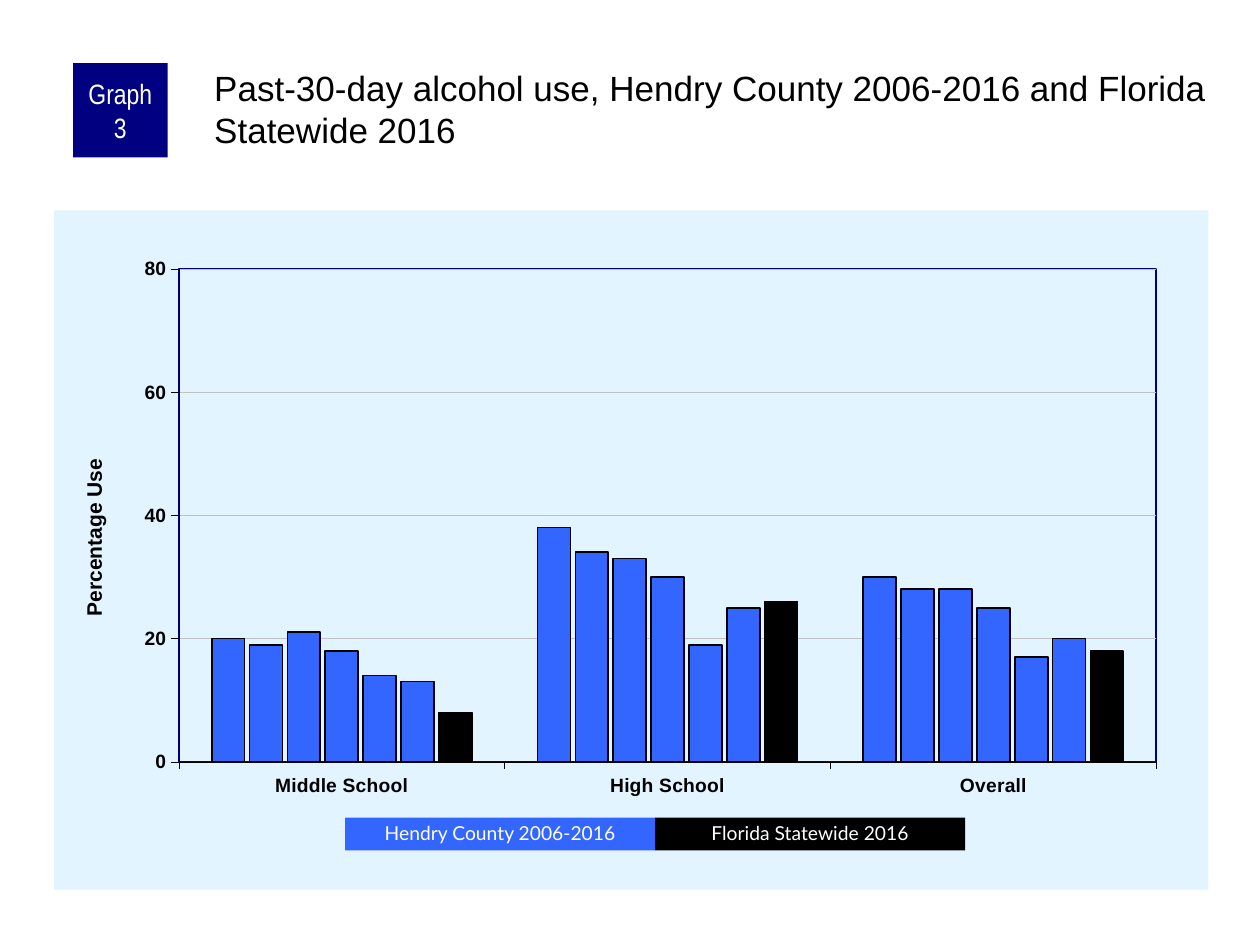
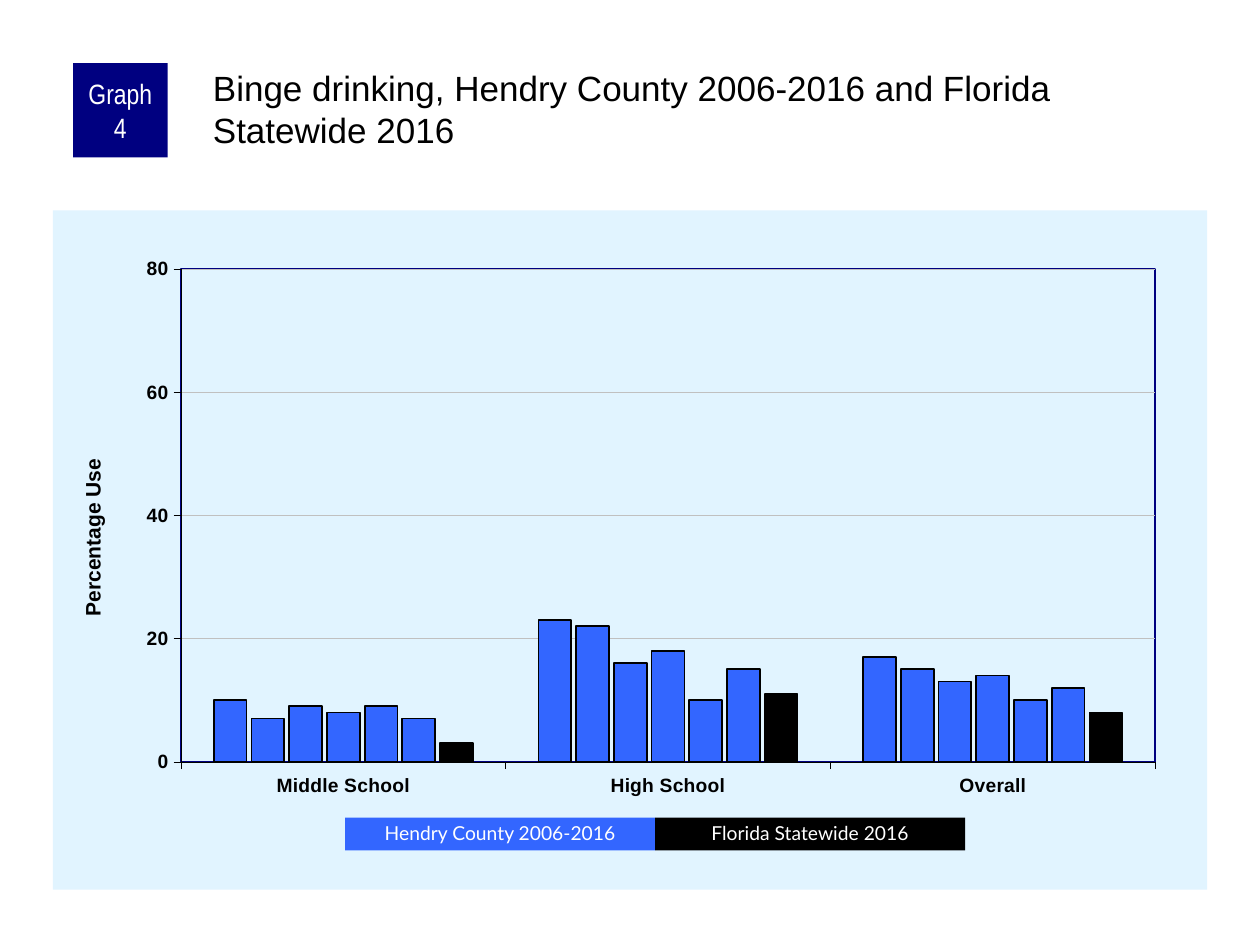
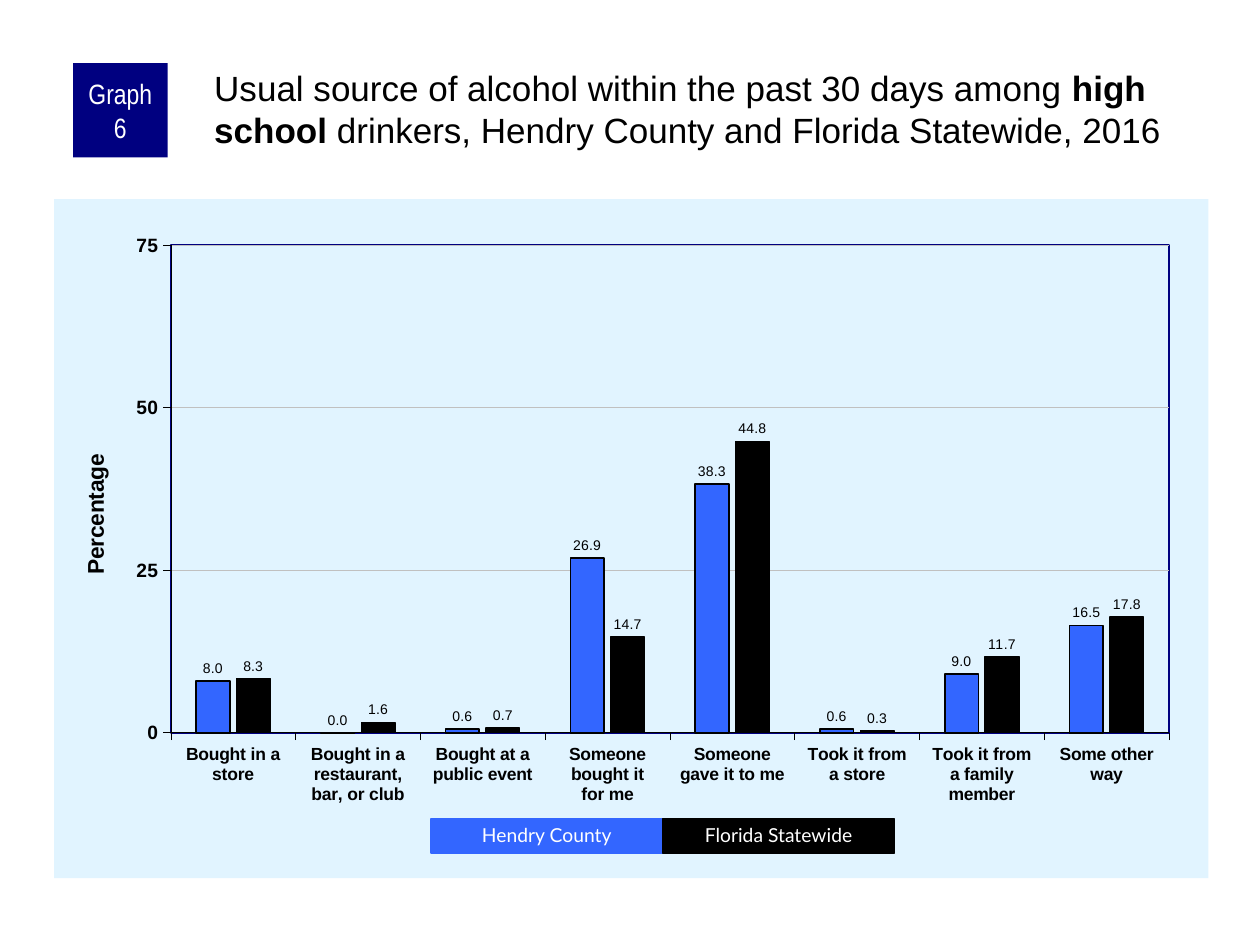
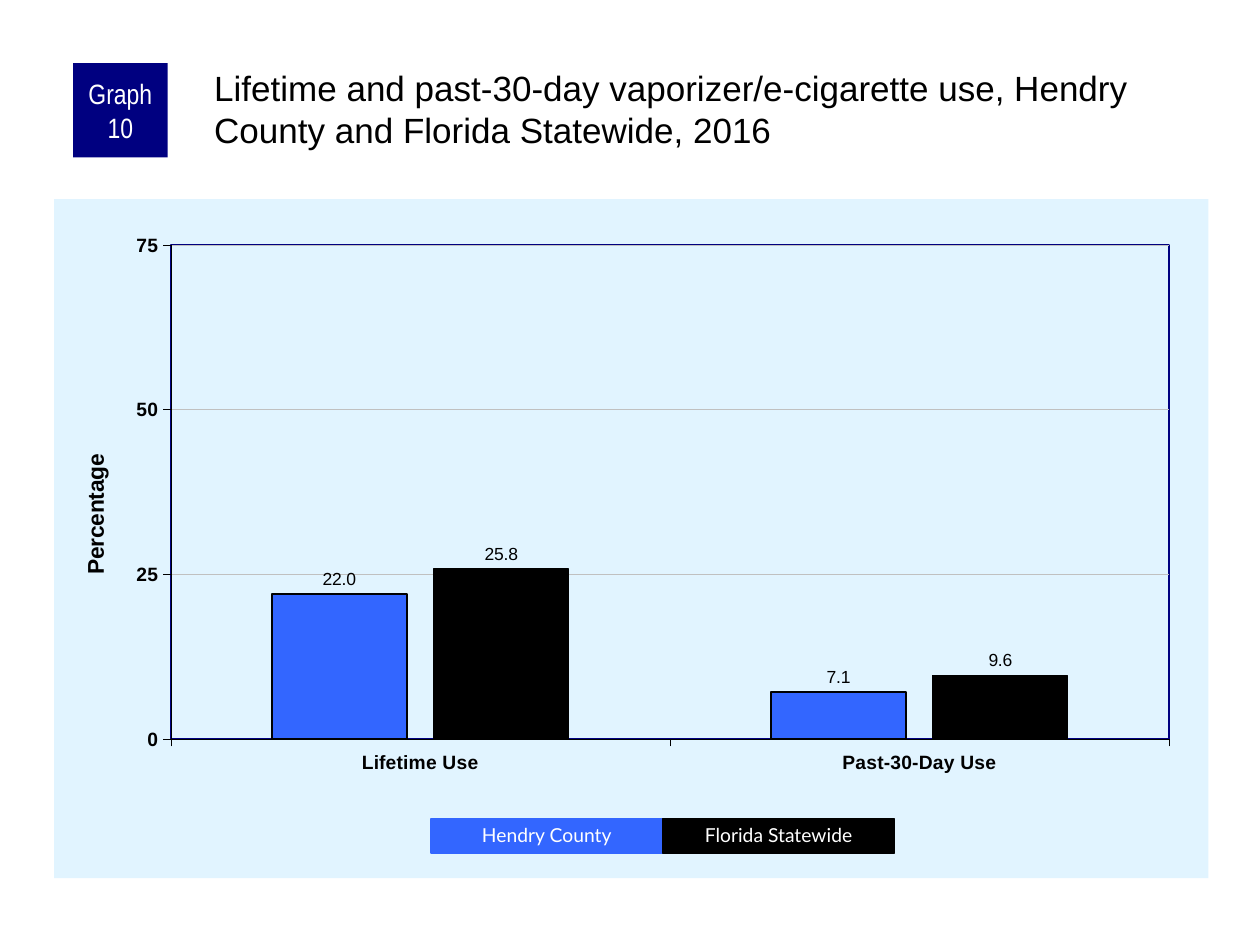
from pptx import Presentation
from pptx.chart.data import CategoryChartData
from pptx.dml.color import RGBColor
from pptx.enum.chart import XL_CHART_TYPE, XL_LABEL_POSITION, XL_TICK_MARK
from pptx.enum.shapes import MSO_SHAPE
from pptx.enum.text import MSO_ANCHOR, MSO_AUTO_SIZE, PP_ALIGN
from pptx.oxml import parse_xml
from pptx.oxml.ns import nsdecls, qn
from pptx.util import Inches, Pt

NAVY, BLUE, BLACK, WHITE = "000080", "3366FF", "000000", "FFFFFF"
PALE, GRAY = "E1F4FF", "C0C0C0"
LEVELS = ["Middle School", "High School", "Overall"]
SOURCES = ["Bought in a store", "Bought in a restaurant, bar, or club",
           "Bought at a public event", "Someone bought it\nfor me",
           "Someone\ngave it to me", "Took it from\na store",
           "Took it from\na family member", "Some other way"]
TREND = dict(top=1.67, unit="Percentage Use", unit_size=12, unit_at=(0.02, 0.36),
             peak=80, step=20, gap=200, overlap=-15, size=8, edge=1)
COMPARE = dict(top=1.58, unit="Percentage", unit_size=13, unit_at=(0.02, 0.37),
               peak=75, step=25, gap=150, overlap=-20, size=11.5, edge=0.75)
TREND_KEY = dict(names=["Hendry County 2006-2016", "Florida Statewide 2016"],
                 left=2.74, top=6.49, width=2.46, height=0.26)
COMPARE_KEY = dict(names=["Hendry County", "Florida Statewide"],
                   left=3.42, top=6.5, width=1.84, height=0.27, edge=0.75)


def color(code):
    """Turn a hex string into a colour."""
    return RGBColor.from_string(code)


def style(font, size, code=BLACK, bold=False, face="Arial"):
    """Set size, colour, weight and face of a font."""
    font.size, font.bold, font.name = Pt(size), bold, face
    font.color.rgb = color(code)


def stroke(line, code, width):
    """Give a line its colour and width."""
    line.color.rgb = color(code)
    line.width = Pt(width)


def inset(frame, left, top, right, bottom):
    """Set the four text margins."""
    frame.margin_left, frame.margin_top = Inches(left), Inches(top)
    frame.margin_right, frame.margin_bottom = Inches(right), Inches(bottom)


def add_box(slide, text, place, fill, size, face, edge=0):
    """Add a filled rectangle with centred white text."""
    box = slide.shapes.add_shape(MSO_SHAPE.RECTANGLE, *map(Inches, place))
    box.shadow.inherit = False
    box.fill.solid()
    box.fill.fore_color.rgb = color(fill)
    if edge:
        stroke(box.line, fill, edge)
    else:
        box.line.fill.background()
    frame = box.text_frame
    frame.word_wrap = True
    frame.vertical_anchor = MSO_ANCHOR.MIDDLE
    para = frame.paragraphs[0]
    para.alignment = PP_ALIGN.CENTER
    run = para.add_run()
    run.text = text
    style(run.font, size, WHITE, face=face)
    return box


def add_badge(slide, number):
    """Add the square that numbers the graph."""
    badge = add_box(slide, f"Graph {number}", (0.58, 0.5, 0.75, 0.75),
                    NAVY, 16, "Arial Narrow")
    inset(badge.text_frame, 0.05, 0, 0.05, 0)


def add_title(slide, parts, left=1.67):
    """Fill the title placeholder; every second part is bold."""
    title = slide.shapes.title
    title.left, title.top = Inches(left), Inches(0.5)
    title.width, title.height = Inches(7.92), Inches(0.83)
    frame = title.text_frame
    frame.auto_size = MSO_AUTO_SIZE.NONE
    frame.word_wrap = True
    frame.vertical_anchor = MSO_ANCHOR.TOP
    inset(frame, 0.03, 0.03, 0, 0)
    para = frame.paragraphs[0]
    para.alignment = PP_ALIGN.LEFT
    for index, part in enumerate(parts):
        run = para.add_run()
        run.text = part
        style(run.font, 20, bold=index % 2 == 1)


def add_key(slide, names, left, top, width, height, edge=0):
    """Add the two joined boxes that name the bar colours."""
    for index, (name, fill) in enumerate(zip(names, (BLUE, BLACK))):
        place = (left + index * width, top, width, height)
        box = add_box(slide, name, place, fill, 11, "Lato", edge)
        box.text_frame.paragraphs[0].line_spacing = 0.9


def set_layout(parent, index, **spots):
    """Place a chart part by fractions of the chart."""
    old = parent.find(qn("c:layout"))
    if old is not None:
        parent.remove(old)
    inner = '<c:layoutTarget val="inner"/>' if "w" in spots else ""
    modes = "".join(f'<c:{key}Mode val="edge"/>' for key in "xy")
    sizes = "".join(f'<c:{key} val="{val}"/>' for key, val in spots.items())
    parent.insert(index, parse_xml(
        f'<c:layout {nsdecls("c")}><c:manualLayout>{inner}{modes}{sizes}'
        '</c:manualLayout></c:layout>'))


def make_look(fill, line):
    """Build the fill and line element of a chart area."""
    return parse_xml(f'<c:spPr {nsdecls("c", "a")}>{fill}{line}</c:spPr>')


def paint(code):
    """Build a solid fill."""
    return f'<a:solidFill><a:srgbClr val="{code}"/></a:solidFill>'


def set_areas(chart, plot):
    """Place the plot and paint the chart and plot areas."""
    root = chart.element.find(qn("c:chart"))
    area = root.find(qn("c:plotArea"))
    set_layout(area, 0, **dict(zip("xywh", plot)))
    area.append(make_look("<a:noFill/>", f'<a:ln w="12700">{paint(NAVY)}</a:ln>'))
    root.addnext(make_look(paint(PALE), "<a:ln><a:noFill/></a:ln>"))


def set_axes(chart, kind, cat_size):
    """Format both axes, the grid and the axis title."""
    values = chart.value_axis
    for axis, size in ((chart.category_axis, cat_size), (values, 11)):
        axis.major_tick_mark = XL_TICK_MARK.OUTSIDE
        style(axis.tick_labels.font, size, bold=True)
        stroke(axis.format.line, BLACK, 0.25)
    values.minimum_scale, values.maximum_scale = 0, kind["peak"]
    values.major_unit = kind["step"]
    stroke(values.major_gridlines.format.line, GRAY, 0.25)
    run = values.axis_title.text_frame.paragraphs[0].add_run()
    run.text = kind["unit"]
    style(run.font, kind["unit_size"], bold=True)
    set_layout(values.axis_title.element, 1, **dict(zip("xy", kind["unit_at"])))


def add_labels(bars, size):
    """Show the values above the bars."""
    labels = bars.data_labels
    labels.show_value = True
    labels.position = XL_LABEL_POSITION.OUTSIDE_END
    labels.number_format = "0.0"
    labels.number_format_is_linked = False
    style(labels.font, size)


def add_bars(slide, kind, cats, rows, plot, left=0.43, cat_size=11, label_size=0):
    """Add the column chart; the last series is the black one."""
    data = CategoryChartData()
    data.categories = cats
    for index, row in enumerate(rows, 1):
        data.add_series(f"Series {index}", row)
    chart = slide.shapes.add_chart(
        XL_CHART_TYPE.COLUMN_CLUSTERED, Inches(left), Inches(kind["top"]),
        Inches(9.16), Inches(5.39), data).chart
    chart.has_legend = chart.has_title = False
    style(chart.font, kind["size"])
    group = chart.plots[0]
    group.gap_width, group.overlap = kind["gap"], kind["overlap"]
    group.vary_by_categories = False
    for index, bars in enumerate(group.series, 1):
        last = index == len(rows)
        bars.format.fill.solid()
        bars.format.fill.fore_color.rgb = color(BLACK if last else BLUE)
        stroke(bars.format.line, BLACK, kind["edge"] if last else 1)
        if label_size:
            add_labels(bars, label_size)
    set_axes(chart, kind, cat_size)
    set_areas(chart, plot)


def main():
    """Build the four graph slides."""
    deck = Presentation()
    deck.slide_width, deck.slide_height = Inches(10), Inches(7.5)
    graphs = [
        (3, ["Past-30-day alcohol use, Hendry County 2006-2016 and Florida "
             "Statewide 2016"], 1.67, TREND_KEY,
         dict(kind=TREND, cats=LEVELS, plot=(0.108, 0.086, 0.847, 0.726),
              rows=[(20, 38, 30), (19, 34, 28), (21, 33, 28), (18, 30, 25),
                    (14, 19, 17), (13, 25, 20), (8, 26, 18)])),
        (4, ["Binge drinking, Hendry County 2006-2016 and Florida "
             "Statewide 2016"], 1.66, TREND_KEY,
         dict(kind=TREND, cats=LEVELS, left=0.42, plot=(0.111, 0.086, 0.844, 0.726),
              rows=[(10, 23, 17), (7, 22, 15), (9, 16, 13), (8, 18, 14),
                    (9, 10, 10), (7, 15, 12), (3, 11, 8)])),
        (6, ["Usual source of alcohol within the past 30 days among ",
             "high school",
             " drinkers, Hendry County and Florida Statewide, 2016"],
         1.67, COMPARE_KEY,
         dict(kind=COMPARE, cats=SOURCES, plot=(0.101, 0.068, 0.865, 0.718),
              cat_size=10, label_size=8,
              rows=[(8, 0, 0.6, 26.9, 38.3, 0.6, 9, 16.5),
                    (8.3, 1.6, 0.7, 14.7, 44.8, 0.3, 11.7, 17.8)])),
        (10, ["Lifetime and past-30-day vaporizer/e-cigarette use, Hendry "
              "County and Florida Statewide, 2016"], 1.67, COMPARE_KEY,
         dict(kind=COMPARE, cats=["Lifetime Use", "Past-30-Day Use"],
              plot=(0.101, 0.068, 0.865, 0.727), label_size=10,
              rows=[(22, 7.1), (25.8, 9.6)])),
    ]
    for number, title, left, key, bars in graphs:
        slide = deck.slides.add_slide(deck.slide_layouts[5])
        add_bars(slide, **bars)
        add_badge(slide, number)
        add_title(slide, title, left)
        add_key(slide, **key)
    deck.save("out.pptx")


if __name__ == "__main__":
    main()
